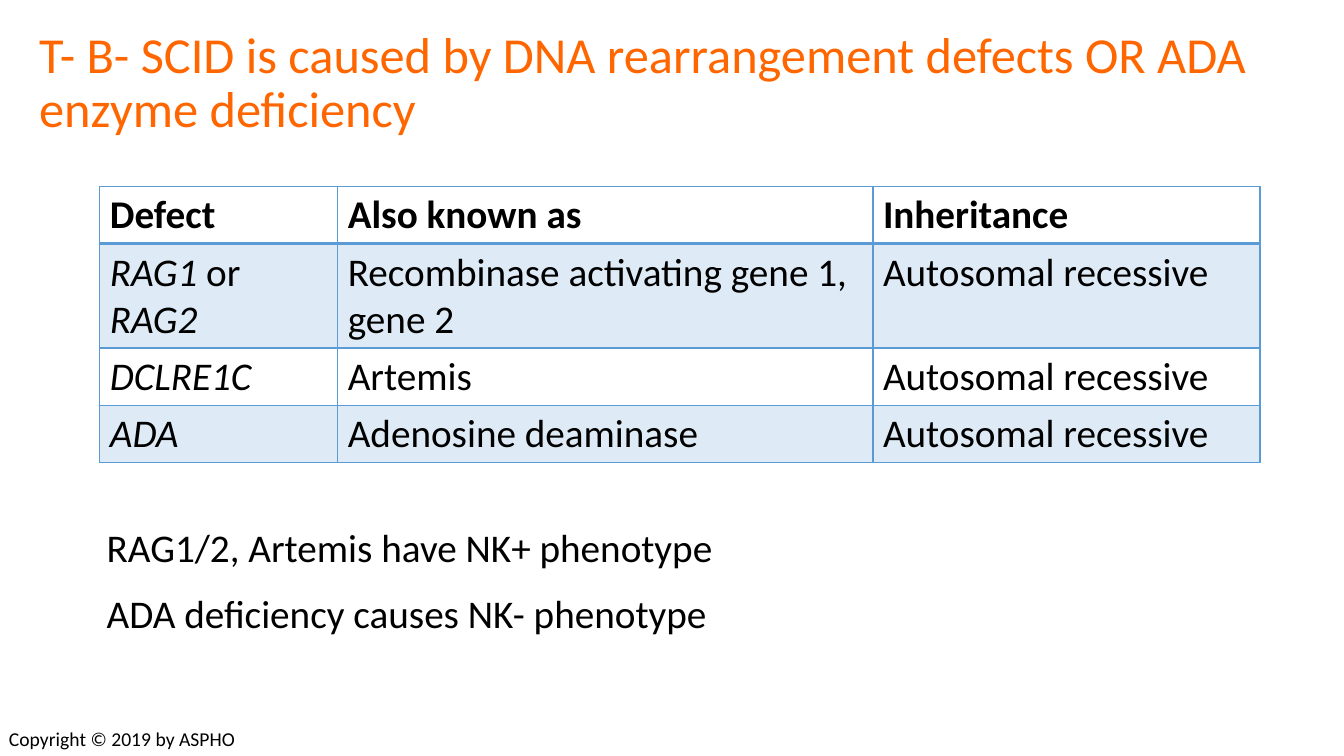
from dataclasses import dataclass

from lxml.etree import SubElement
from pptx import Presentation
from pptx.dml.color import RGBColor
from pptx.enum.text import MSO_ANCHOR
from pptx.oxml import parse_xml
from pptx.oxml.ns import nsdecls, qn
from pptx.util import Pt


@dataclass(frozen=True)
class Theme:
    font: str = "Calibri"
    title_color: str = "FF6600"
    text_color: str = "000000"
    accent: str = "5B9BD5"
    band_opacity: int = 20
    title_size: int = 36
    body_size: int = 28
    footer_size: int = 14


class SlideBuilder:
    def __init__(self, slide, theme):
        self.slide = slide
        self.theme = theme

    def add_run(self, paragraph, text, size, color, bold=False, italic=False):
        run = paragraph.add_run()
        run.text = text
        run.font.name = self.theme.font
        run.font.size = Pt(size)
        run.font.color.rgb = RGBColor.from_string(color)
        run.font.bold = bold
        run.font.italic = italic

    def add_text(self, bounds, lines, size, color, anchor=MSO_ANCHOR.TOP,
                 line_spacing=1.0, gap=0, hanging=0):
        shape = self.slide.shapes.add_textbox(*map(Pt, bounds))
        frame = shape.text_frame
        frame.word_wrap = True
        frame.vertical_anchor = anchor
        for index, line in enumerate(lines):
            paragraph = frame.add_paragraph() if index else frame.paragraphs[0]
            paragraph.line_spacing = line_spacing
            if index:
                paragraph.space_before = Pt(gap)
            if hanging:
                properties = paragraph._p.get_or_add_pPr()
                properties.set("marL", str(Pt(hanging)))
                properties.set("indent", str(Pt(-hanging)))
            self.add_run(paragraph, line, size, color)

    def style_cell(self, cell, banded, bottom_width):
        properties = cell._tc.get_or_add_tcPr()
        if banded:
            cell.fill.solid()
            cell.fill.fore_color.rgb = RGBColor.from_string(self.theme.accent)
            color = properties.find(".//" + qn("a:srgbClr"))
            alpha = SubElement(color, qn("a:alpha"))
            alpha.set("val", str(self.theme.band_opacity * 1000))
        else:
            cell.fill.background()
        widths = {"lnL": 1, "lnR": 1, "lnT": 1, "lnB": bottom_width}
        for position, (side, width) in enumerate(widths.items()):
            border = parse_xml(
                f'<a:{side} {nsdecls("a")} w="{Pt(width)}"><a:solidFill>'
                f'<a:srgbClr val="{self.theme.accent}"/></a:solidFill></a:{side}>')
            properties.insert(position, border)

    def add_table(self, left, top, widths, heights, rows):
        shape = self.slide.shapes.add_table(
            len(rows), len(widths), Pt(left), Pt(top),
            Pt(sum(widths)), Pt(sum(heights)))
        table = shape.table
        table.first_row = False
        table.horz_banding = False
        for column, width in zip(table.columns, widths):
            column.width = Pt(width)
        for row_index, (height, texts) in enumerate(zip(heights, rows)):
            table.rows[row_index].height = Pt(height)
            header = row_index == 0
            for column_index, runs in enumerate(texts):
                cell = table.cell(row_index, column_index)
                self.style_cell(cell, row_index % 2 == 1, 2 if header else 1)
                for text, italic in runs:
                    self.add_run(cell.text_frame.paragraphs[0], text,
                                 self.theme.body_size, self.theme.text_color,
                                 bold=header, italic=italic)


def plain(text):
    return [(text, False)]


def gene(text):
    return [(text, True)]


def main():
    presentation = Presentation()
    presentation.slide_width = Pt(960)
    presentation.slide_height = Pt(540)
    slide = presentation.slides.add_slide(presentation.slide_layouts[6])
    theme = Theme()
    builder = SlideBuilder(slide, theme)

    builder.add_text(
        (20.9, 30.2, 915, 59.8),
        ["T- B- SCID is caused by DNA rearrangement defects OR ADA enzyme deficiency"],
        theme.title_size, theme.title_color, MSO_ANCHOR.MIDDLE, line_spacing=0.9)

    builder.add_text(
        (69.1, 370, 877, 92.2),
        ["RAG1/2, Artemis have NK+ phenotype",
         "ADA deficiency causes NK- phenotype"],
        theme.body_size, theme.text_color, gap=14, hanging=36)

    recessive = plain("Autosomal recessive")
    builder.add_table(
        71.3, 133.2, (170, 382.3, 276.5), (40.8, 74.4, 40.8, 40.8),
        [
            [plain("Defect"), plain("Also known as"), plain("Inheritance")],
            [[("RAG1 ", True), ("or", False), (" RAG2", True)],
             plain("Recombinase activating gene 1, gene 2"), recessive],
            [gene("DCLRE1C"), plain("Artemis"), recessive],
            [gene("ADA"), plain("Adenosine deaminase"), recessive],
        ])

    builder.add_text((-0.7, 515.5, 178.6, 24.5), ["Copyright © 2019 by ASPHO"],
                     theme.footer_size, theme.text_color)

    presentation.save("out.pptx")


if __name__ == "__main__":
    main()
